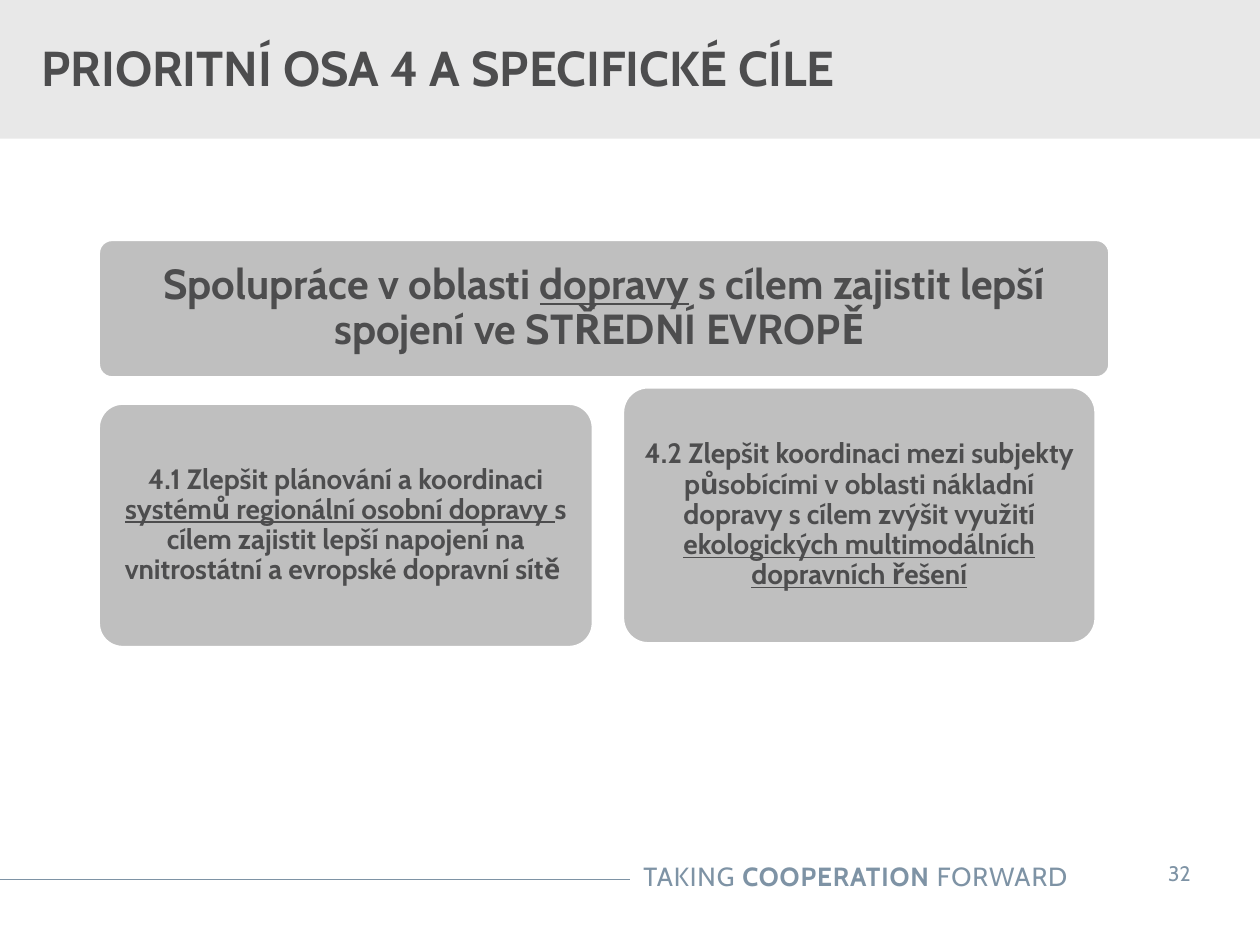
from dataclasses import dataclass

import pptx
import pptx.dml.color
import pptx.enum.shapes
import pptx.enum.text
import pptx.oxml
import pptx.oxml.ns
import pptx.util

SCALE = 9144
SHAPE = pptx.enum.shapes.MSO_SHAPE
ALIGN = pptx.enum.text.PP_ALIGN
ANCHOR = pptx.enum.text.MSO_ANCHOR


@dataclass(frozen=True)
class Theme:
    font: str = "Cabin"
    ink: str = "4D4D4E"
    accent: str = "7E93A5"
    band: str = "E8E8E8"
    card: str = "BFBFBF"
    edge: str = "FFFFFF"
    title_size: int = 28
    axis_size: int = 24
    goal_size: int = 16
    motto_size: int = 15
    number_size: int = 12


THEME = Theme()


def px(length):
    return pptx.util.Emu(length * SCALE)


def color(code):
    return pptx.dml.color.RGBColor.from_string(code)


def style(para, size, code, align, bold=False):
    para.alignment = align
    para.font.name = THEME.font
    para.font.size = pptx.util.Pt(size)
    para.font.bold = bold
    para.font.color.rgb = color(code)


def set_margins(frame, across, down):
    frame.margin_left = frame.margin_right = px(across)
    frame.margin_top = frame.margin_bottom = px(down)


def add_shape(page, kind, box, fill):
    shape = page.shapes.add_shape(kind, *map(px, box))
    shape.shadow.inherit = False
    shape.fill.solid()
    shape.fill.fore_color.rgb = color(fill)
    shape.line.fill.background()
    return shape


def add_header(page, box, text):
    left, top, width, height = box
    band = add_shape(page, SHAPE.RECTANGLE, box, THEME.band)
    title = page.shapes.title
    title.element.addprevious(band.element)
    title.left, title.top = px(left), px(top + 16)
    title.width, title.height = px(width - 280), px(height - 35)
    frame = title.text_frame
    frame.auto_size = pptx.enum.text.MSO_AUTO_SIZE.NONE
    frame.vertical_anchor = ANCHOR.MIDDLE
    frame.margin_left = px(33)
    frame.text = text
    style(frame.paragraphs[0], THEME.title_size, THEME.ink, ALIGN.LEFT, True)


def add_card(page, box, size, inset, parts):
    card = add_shape(page, SHAPE.ROUNDED_RECTANGLE, box, THEME.card)
    card.adjustments[0] = 0.1
    card.line.color.rgb = color(THEME.edge)
    card.line.width = pptx.util.Pt(2)
    frame = card.text_frame
    frame.word_wrap = True
    frame.vertical_anchor = ANCHOR.MIDDLE
    set_margins(frame, inset, inset)
    para = frame.paragraphs[0]
    para.line_spacing = 0.9
    style(para, size, THEME.ink, ALIGN.CENTER, True)
    for text, underlined in parts:
        span = para.add_run()
        span.text = text
        if underlined:
            span.font.underline = True


def add_footer(page, box, number):
    left, top, width, height = box
    rule = page.shapes.add_connector(
        pptx.enum.shapes.MSO_CONNECTOR.STRAIGHT,
        px(left), px(top + 25), px(left + 500), px(top + 25))
    rule.line.color.rgb = color(THEME.accent)
    rule.line.width = pptx.util.Pt(0.75)
    properties = rule.element.find(pptx.oxml.ns.qn("p:spPr"))
    properties.append(pptx.oxml.parse_xml(
        "<a:effectLst %s/>" % pptx.oxml.ns.nsdecls("a")))

    motto = page.shapes.add_textbox(px(left + 388), px(top + 5), px(469), px(35))
    motto.text_frame.word_wrap = True
    para = motto.text_frame.paragraphs[0]
    style(para, THEME.motto_size, THEME.accent, ALIGN.RIGHT)
    for text, bold in (("TAKING ", False), ("COOPERATION", True), (" FORWARD", False)):
        span = para.add_run()
        span.text = text
        span.font.bold = bold
        span.font._element.set("spc", "50")

    counter = page.shapes.add_textbox(
        px(left + width - 101), px(top), px(74), px(height))
    frame = counter.text_frame
    frame.word_wrap = False
    set_margins(frame, 20, 10)
    frame.text = number
    style(frame.paragraphs[0], THEME.number_size, THEME.accent, ALIGN.CENTER)


def main():
    deck = pptx.Presentation()
    deck.slide_width, deck.slide_height = px(1000), px(750)
    page = deck.slides.add_slide(deck.slide_layouts[5])
    add_header(page, (0, 0, 1000, 110), "PRIORITNÍ OSA 4 A SPECIFICKÉ CÍLE")
    add_card(page, (78, 190, 803, 110), THEME.axis_size, 10, (
        ("Spolupráce v oblasti ", False),
        ("dopravy", True),
        (" s cílem zajistit lepší spojení ve STŘEDNÍ EVROPĚ ", False)))
    add_card(page, (78, 320, 393, 194), THEME.goal_size, 7, (
        ("4.1 Zlepšit plánování a koordinaci ", False),
        ("systémů regionální osobní dopravy ", True),
        ("s cílem zajistit lepší napojení na vnitrostátní a evropské dopravní sítě ", False)))
    add_card(page, (494, 307, 376, 204), THEME.goal_size, 7, (
        ("4.2 Zlepšit koordinaci mezi subjekty působícími v oblasti nákladní "
         "dopravy s cílem zvýšit využití ", False),
        ("ekologických multimodálních dopravních řešení", True)))
    add_footer(page, (0, 673, 1000, 40), "32")
    deck.save("out.pptx")


if __name__ == "__main__":
    main()
